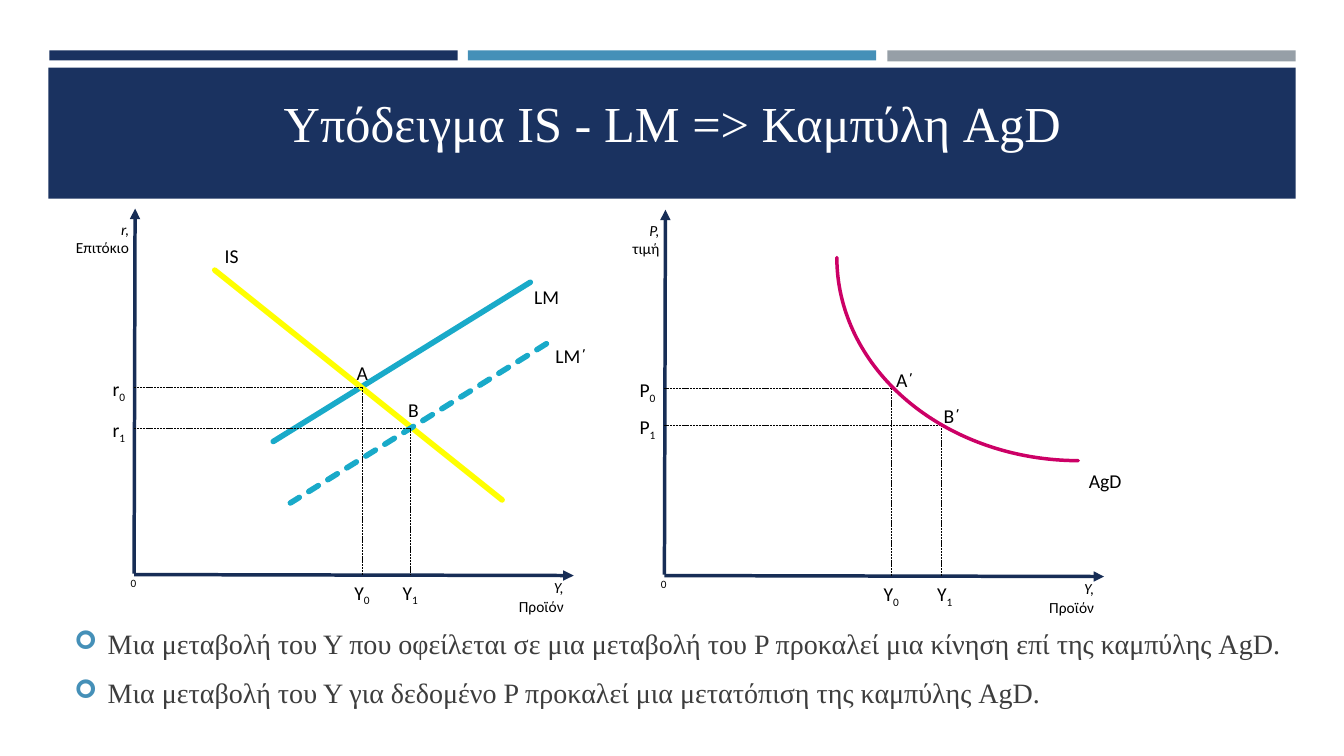
from lxml import etree
from pptx import Presentation
from pptx import util as u
from pptx.dml.color import RGBColor
from pptx.enum import dml, shapes, text
from pptx.oxml.ns import qn

PX = 9144
SERIF, SANS = "Times New Roman", "Calibri"
NAVY, AXIS, BLUE, GREY = "1A3260", "172D56", "4590B8", "969FA7"
TEAL, YELLOW, PINK, BLACK = "19AAC9", "FFFF00", "CC0066", "000000"
LEFT, CENTER, RIGHT = text.PP_ALIGN.LEFT, text.PP_ALIGN.CENTER, text.PP_ALIGN.RIGHT

TITLE = "Υπόδειγμα IS - LM => Καμπύλη AgD"
BARS = [(49, 50, 405, 10, NAVY), (464, 50, 405, 10, BLUE),
        (880, 50, 405, 11, GREY), (48, 67, 1237, 130, NAVY)]
BULLETS = [
    "Μια μεταβολή του Υ που οφείλεται σε μια μεταβολή του P προκαλεί μια κίνηση επί της καμπύλης AgD.",
    "Μια μεταβολή του Υ για δεδομένο P προκαλεί μια μετατόπιση της καμπύλης AgD.",
]
DIAGRAMS = [
    dict(origin=(133, 570), symbol="r", axis_name="Επιτόκιο",
         points=[(359, 384, 359), (407, 425, 407)],
         curves=[((526, 280), (271, 438), TEAL, False),
                 ((213, 268), (498, 496), YELLOW, False),
                 ((542, 341), (288, 499), TEAL, True)],
         arc=None,
         names=[("IS", 213, 237, 56), ("LM", 520, 278, 57), ("LM΄", 541, 336, 57),
                ("A", 344, 353, 30), ("Β", 395, 390, 30)]),
    dict(origin=(659, 571), symbol="P", axis_name="τιμή",
         points=[(884, 385, 884), (934, 422, 937)],
         curves=[],
         arc=(830, 54, 480, 403),
         names=[("A΄", 879, 360, 40), ("Β΄", 926, 396, 37), ("AgD", 1070, 460, 58)]),
]


def color(value):
    return RGBColor.from_string(value)


def px(*values):
    return [u.Emu(v * PX) for v in values]


def add_run(p, words, size, font, fill, italic=False, sub=False):
    r = p.add_run()
    r.text = words
    r.font.size, r.font.name, r.font.italic = u.Pt(size), font, italic
    r.font.color.rgb = color(fill)
    if sub:
        r._r.get_or_add_rPr().set("baseline", "-25000")


def add_frame(parent, box, anchor=text.MSO_ANCHOR.TOP):
    tf = parent.shapes.add_textbox(*px(*box)).text_frame
    tf.word_wrap = True
    tf.vertical_anchor = anchor
    return tf


def add_label(parent, box, paragraphs, size=14, align=LEFT):
    tf = add_frame(parent, box)
    for i, runs in enumerate(paragraphs):
        p = tf.add_paragraph() if i else tf.paragraphs[0]
        p.alignment = align
        for words, style in runs:
            add_run(p, words, size, SANS, BLACK, **style)


def add_line(parent, start, end, fill, width, dashed=False, arrow=False, rounded=False):
    c = parent.shapes.add_connector(shapes.MSO_CONNECTOR.STRAIGHT, *px(*start, *end))
    c.line.color.rgb, c.line.width = color(fill), u.Pt(width)
    if dashed:
        c.line.dash_style = dml.MSO_LINE.SQUARE_DOT
    ln = c.line._get_or_add_ln()
    if rounded:
        ln.set("cap", "rnd")
    if arrow:
        etree.SubElement(ln, qn("a:headEnd")).set("type", "triangle")
    etree.SubElement(c._element.spPr, qn("a:effectLst"))


def add_diagram(s, d):
    g = s.shapes.add_group_shape()
    x0, y0 = d["origin"]
    for start, end, fill, dashed in d["curves"]:
        add_line(g, start, end, fill, 4, dashed, rounded=True)
    add_line(g, (x0 + 1, y0 - 363), (x0, y0 - 1), AXIS, 2.5, arrow=True)
    add_line(g, (x0 + 436, y0 + 1), (x0, y0), AXIS, 2.5, arrow=True)

    italic, sub = dict(italic=True), dict(sub=True)
    add_label(g, (x0 - 75, y0 - 357, 80, 47),
              [[(d["symbol"] + ",", italic)], [(d["axis_name"], {})]], 11, RIGHT)
    add_label(g, (x0 - 21, y0 - 3, 33, 24), [[("0", {})]], 8, RIGHT)
    add_label(g, (x0 + 365, y0 - 1, 71, 47), [[("Y, ", italic), ("Προϊόν", {})]], 11, RIGHT)

    for i, (x, y, label_x) in enumerate(d["points"]):
        add_line(g, (x0, y), (x, y), BLACK, 0.5, dashed=True)
        add_line(g, (x, y), (x, y0), BLACK, 0.5, dashed=True)
        add_label(g, (x0 - 39, y - 15, 40, 34),
                  [[(d["symbol"], {}), (str(i), sub)]], align=RIGHT)
        add_label(g, (label_x - 19, y0 + 1, 38, 34),
                  [[("Y", {}), (str(i), sub)]], align=CENTER)

    if d["arc"]:
        sp = g.shapes.add_shape(shapes.MSO_SHAPE.ARC, *px(*d["arc"]))
        sp.adjustments[0], sp.adjustments[1] = 162.09, 0
        sp.rotation = 180
        sp.shadow.inherit = False
        sp.fill.background()
        sp.line.color.rgb, sp.line.width = color(PINK), u.Pt(2.5)
        sp.line._get_or_add_ln().set("cap", "rnd")

    for name, x, y, w in d["names"]:
        add_label(g, (x, y, w, 34), [[(name, {})]])


def add_bullets(s):
    tf = add_frame(s, (64, 617, 1232, 120))
    for i, words in enumerate(BULLETS):
        p = tf.add_paragraph() if i else tf.paragraphs[0]
        p.alignment = text.PP_ALIGN.JUSTIFY
        p.space_before, p.space_after = u.Pt(5), u.Pt(6)
        pPr = p._p.get_or_add_pPr()
        pPr.set("marL", str(33 * PX))
        pPr.set("indent", str(-33 * PX))
        clr = etree.SubElement(pPr, qn("a:buClr"))
        etree.SubElement(clr, qn("a:srgbClr")).set("val", BLUE)
        etree.SubElement(pPr, qn("a:buSzPct")).set("val", "92000")
        etree.SubElement(pPr, qn("a:buFont")).set("typeface", "Wingdings")
        etree.SubElement(pPr, qn("a:buChar")).set("char", "➢")
        add_run(p, words, 20, SERIF, "3D3D3D")


def main():
    prs = Presentation()
    prs.slide_width, prs.slide_height = px(1333, 750)
    s = prs.slides.add_slide(prs.slide_layouts[6])
    for *box, fill in BARS:
        sp = s.shapes.add_shape(shapes.MSO_SHAPE.RECTANGLE, *px(*box))
        sp.shadow.inherit = False
        sp.fill.solid()
        sp.fill.fore_color.rgb = color(fill)
        sp.line.fill.background()
    p = add_frame(s, (64, 69, 1206, 87), text.MSO_ANCHOR.BOTTOM).paragraphs[0]
    p.alignment = CENTER
    add_run(p, TITLE, 36, SERIF, "FFFFFF")
    for d in DIAGRAMS:
        add_diagram(s, d)
    add_bullets(s)
    prs.save("out.pptx")


if __name__ == "__main__":
    main()
